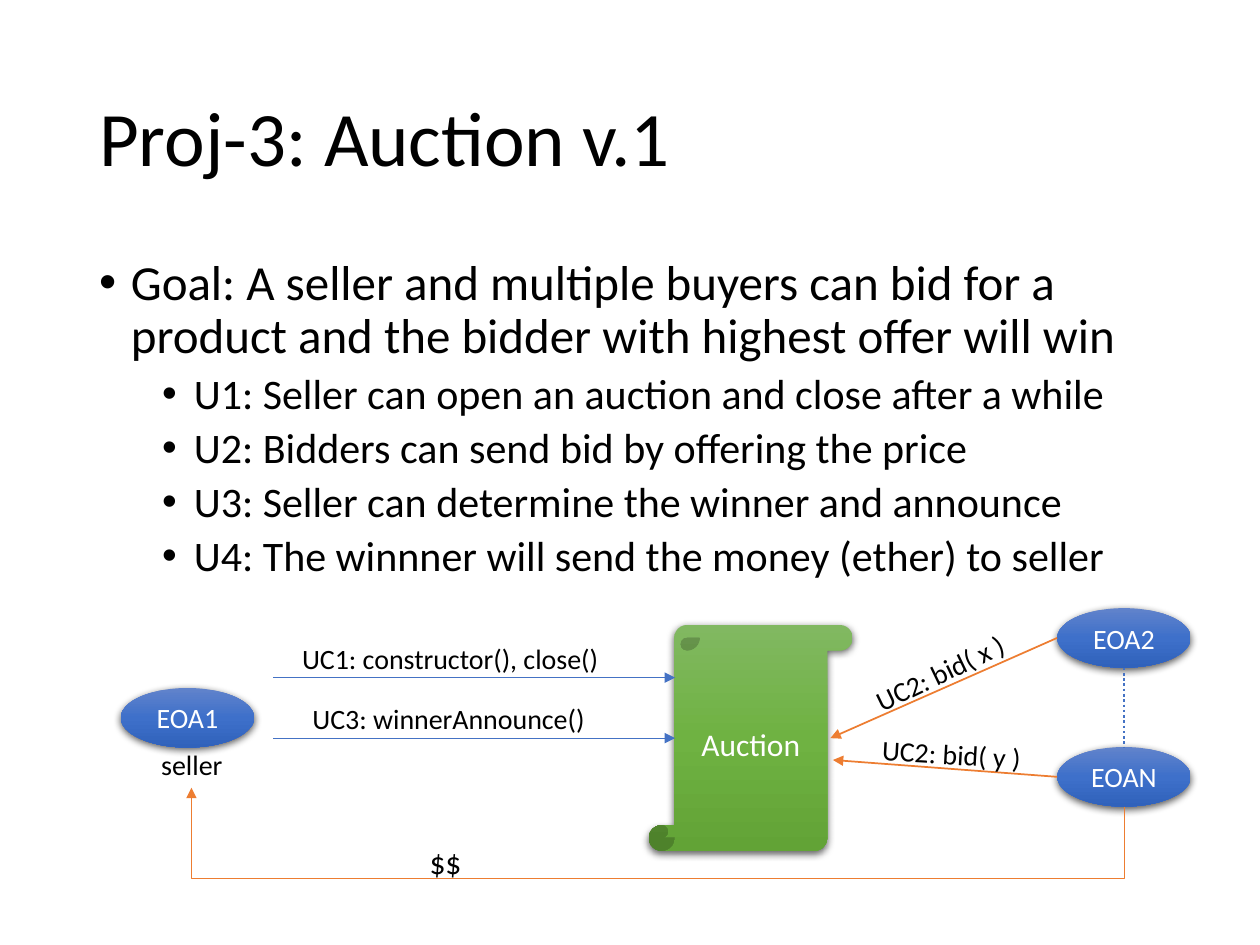
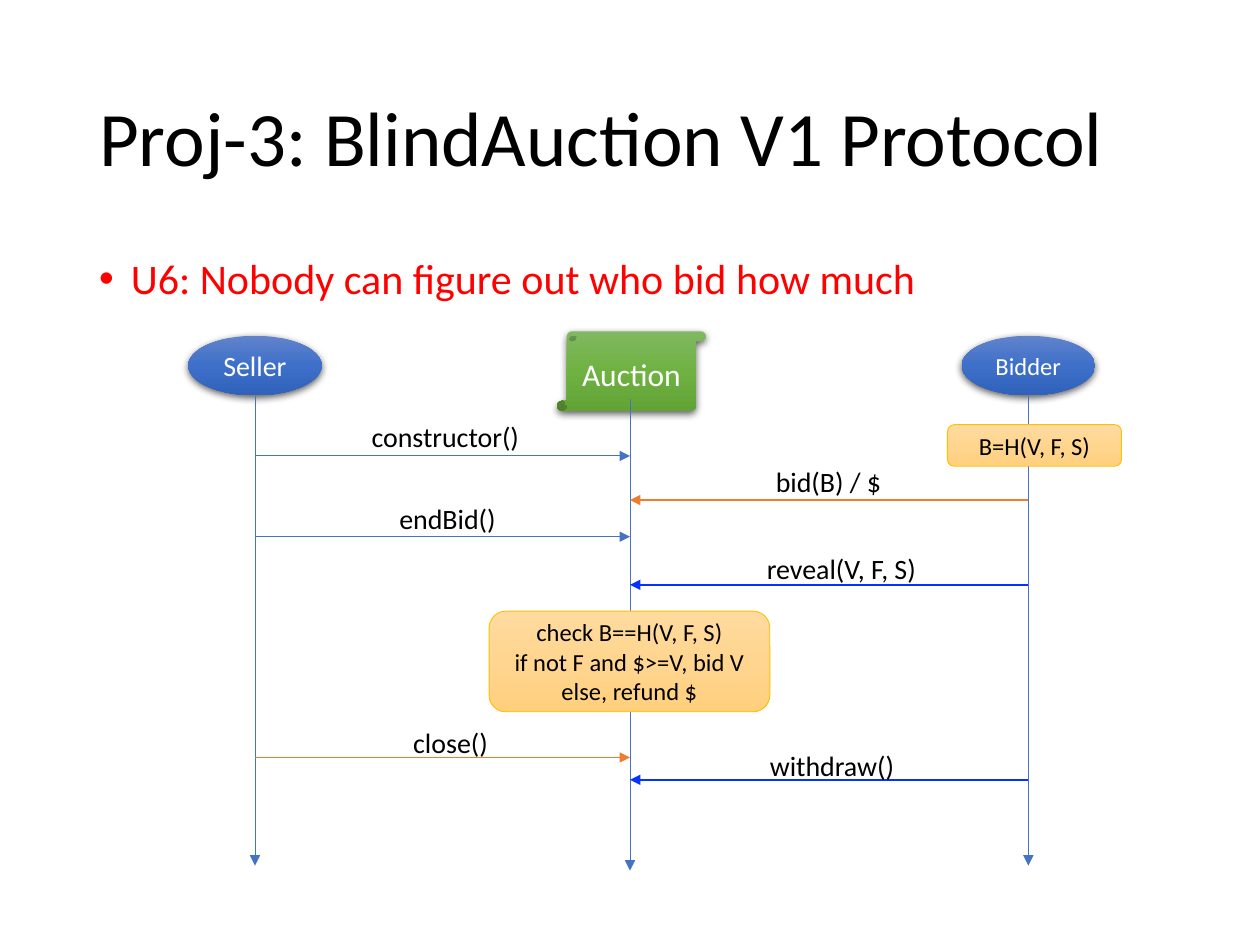
"""Build two auction protocol slides: the participants and the blind-bid sequence."""
from dataclasses import dataclass

from lxml import etree
from pptx import Presentation, util as u
from pptx.dml.color import RGBColor
from pptx.enum import dml, shapes, text
from pptx.oxml.ns import qn


@dataclass(frozen=True)
class Theme:
    font: str = "Calibri"
    black: str = "000000"
    white: str = "FFFFFF"
    red: str = "FF0000"
    blue: str = "4472C4"
    bright: str = "0432FF"
    orange: str = "ED7D31"
    gold: str = "FFC000"
    actor_fill: tuple = ("6183CB", "3E70CA", "3062BB")
    contract_fill: tuple = ("81B861", "6FB242", "62A336")
    note_fill: tuple = ("FFDB9E", "FFD590", "FFD07C")
    title: int = 44
    goal: int = 28
    item: int = 24
    large: int = 18
    label: int = 16
    small: int = 14
    thin: float = 0.5
    medium: float = 1
    dotted: float = 1.5


T = Theme()
TITLE_BOX = (1.75, 1.02, 21.9, 3.68)
ACTOR_W, ACTOR_H = 2.69, 1.2
LABEL_H = 0.94
SELLER_X, AUCTION_X, BIDDER_X = 5.14, 12.7, 20.73

OVERVIEW = {
    "title": "Proj-3: Auction v.1",
    "body_box": (1.75, 5.08, 21.9, 12.09),
    "bullets": [
        (0, "Goal: A seller and multiple buyers can bid for a product and the bidder with highest offer will win",
         T.goal, T.black),
        (1, "U1: Seller can open an auction and close after a while", T.item, T.black),
        (1, "U2: Bidders can send bid by offering the price", T.item, T.black),
        (1, "U3: Seller can determine the winner and announce", T.item, T.black),
        (1, "U4: The winnner will send the money (ether) to seller", T.item, T.black),
    ],
    "contract": (13.08, 12.6, 4.11, 4.55),
    "actors": [("EOA1", 3.78, 14.47, T.label), ("EOA2", 22.66, 12.86, T.label),
               ("EOAN", 22.66, 15.66, T.label)],
    "lines": [
        ((5.51, 13.66), (13.61, 13.66), T.blue, T.thin),
        ((5.51, 14.88), (13.61, 14.88), T.blue, T.thin),
        ((21.31, 12.86), (16.74, 14.88), T.orange, T.medium),
        ((21.31, 15.66), (16.79, 15.32), T.orange, T.medium),
    ],
    "labels": [
        ("UC1: constructor(), close()", 5.84, 12.8, 6.58, 0, T.label),
        ("UC3: winnerAnnounce()", 6.05, 14.02, 6.07, 0, T.label),
        ("seller", 3, 14.94, 1.75, 0, T.label),
        ("UC2: bid( x )", 17.3, 13.08, 3.33, 334.2, T.label),
        ("UC2: bid( y )", 17.53, 14.73, 3.35, 3.2, T.label),
        ("$$", 8.41, 16.87, 1.17, 0, T.large),
    ],
    "notes": [],
}

MESSAGES = [
    ("constructor()", SELLER_X, 9.19, T.blue, T.thin, 7.24, 8.33, 3.53),
    ("bid(B) / $", BIDDER_X, 10.08, T.orange, T.medium, 15.39, 9.25, 2.67),
    ("endBid()", SELLER_X, 10.82, T.blue, T.thin, 7.8, 9.98, 2.49),
    ("reveal(V, F, S)", BIDDER_X, 11.79, T.bright, T.medium, 15.21, 11, 3.56),
    ("close()", SELLER_X, 15.27, T.orange, T.thin, 8.08, 14.5, 2.03),
    ("withdraw()", BIDDER_X, 15.72, T.bright, T.medium, 15.27, 14.96, 3.05),
]
LIFELINES = [(SELLER_X, 7.98, 17.45), (AUCTION_X, 8.05, 17.55), (BIDDER_X, 7.98, 17.45)]

PROTOCOL = {
    "title": "Proj-3: BlindAuction V1 Protocol",
    "body_box": (1.75, 5.08, 21.9, 2.51),
    "bullets": [(0, "U6: Nobody can figure out who bid how much", T.item, T.red)],
    "contract": (11.23, 6.68, 3, 1.6),
    "actors": [("Seller", SELLER_X, 7.37, T.label), ("Bidder", BIDDER_X, 7.37, T.small)],
    "lines": [((x, top), (x, end), T.blue, T.thin) for x, top, end in LIFELINES]
    + [((x, y), (AUCTION_X, y), color, width) for _, x, y, color, width, *_ in MESSAGES],
    "labels": [(words, left, top, w, 0, T.label) for words, *_, left, top, w in MESSAGES],
    "notes": [
        ("B=H(V, F, S)", (19.1, 8.56, 3.51, 0.84)),
        ("check B==H(V, F, S)\nif not F and $>=V, bid V\nelse, refund $", (9.86, 12.32, 5.66, 2.03)),
    ],
}


def cm(*values):
    return [u.Cm(v) for v in values]


def sub(parent, tag, **attrs):
    return etree.SubElement(parent, qn(tag), {k: str(v) for k, v in attrs.items()})


def write(p, words, size=T.label, color=T.black, align=None, spacing=None, before=None):
    r = p.add_run()
    r.text = words
    r.font.name, r.font.size = T.font, u.Pt(size)
    r.font.color.rgb = RGBColor.from_string(color)
    p.alignment, p.line_spacing = align, spacing
    if before:
        p.space_before = u.Pt(before)


def add_title(s, words):
    tf = s.shapes.add_textbox(*cm(*TITLE_BOX)).text_frame
    tf.word_wrap, tf.vertical_anchor = True, text.MSO_ANCHOR.MIDDLE
    write(tf.paragraphs[0], words, size=T.title, spacing=0.9)


def add_bullets(s, box, bullets):
    tf = s.shapes.add_textbox(*cm(*box)).text_frame
    tf.word_wrap = True
    for i, (level, words, size, color) in enumerate(bullets):
        p = tf.add_paragraph() if i else tf.paragraphs[0]
        p.level = level
        write(p, words, size=size, color=color, spacing=0.9, before=5 if level else 10)
        pPr = p._p.get_or_add_pPr()
        pPr.set("marL", str(u.Cm(0.64 + 1.27 * level)))
        pPr.set("indent", str(u.Cm(-0.64)))
        sub(pPr, "a:buFont", typeface="Arial")
        sub(pPr, "a:buChar", char="•")


def add_node(s, kind, box, words, stops, size=T.label, color=T.white, outline=None):
    sp = s.shapes.add_shape(kind, *cm(*box))
    sp.fill.gradient()
    sp.fill.gradient_angle = 270
    gs_list = sp._element.spPr.find(".//" + qn("a:gsLst"))
    for gs in list(gs_list):
        gs_list.remove(gs)
    for i, stop in enumerate(stops):
        sub(sub(gs_list, "a:gs", pos=i * 50000), "a:srgbClr", val=stop)
    sp.shadow.inherit = False
    if outline:
        sp.line.color.rgb, sp.line.width = RGBColor.from_string(outline), u.Pt(T.thin)
    else:
        sp.line.fill.background()
        shadow = sub(sp._element.spPr.find(qn("a:effectLst")), "a:outerShdw", blurRad=u.Pt(4.5),
                     dist=u.Pt(1.5), dir=5400000, algn="ctr", rotWithShape=0)
        sub(sub(shadow, "a:srgbClr", val=T.black), "a:alpha", val=63000)
    tf = sp.text_frame
    tf.word_wrap, tf.vertical_anchor = True, text.MSO_ANCHOR.MIDDLE
    for i, line in enumerate(words.split("\n")):
        p = tf.add_paragraph() if i else tf.paragraphs[0]
        write(p, line, size=size, color=color, align=text.PP_ALIGN.CENTER)


def add_line(s, start, end, color, width, kind=shapes.MSO_CONNECTOR.STRAIGHT, arrow=True):
    c = s.shapes.add_connector(kind, *cm(*start, *end))
    c.line.color.rgb, c.line.width = RGBColor.from_string(color), u.Pt(width)
    if arrow:
        sub(c.line._get_or_add_ln(), "a:tailEnd", type="triangle")
    sub(c._element.spPr, "a:effectLst")
    return c


def add_return_path(s, start, end, bottom):
    (x1, y1), (x2, y2) = start, end
    cx, cy, span, rise = (x1 + x2) / 2, (y1 + y2) / 2, x1 - x2, y1 - y2
    c = add_line(s, (cx + rise / 2, cy - span / 2), (cx - rise / 2, cy + span / 2),
                 T.orange, T.thin, kind=shapes.MSO_CONNECTOR.ELBOW)
    spPr = c._element.spPr
    spPr.find(qn("a:xfrm")).set("rot", "5400000")
    guides = spPr.find(qn("a:prstGeom")).find(qn("a:avLst"))
    sub(guides, "a:gd", name="adj1", fmla=f"val {round((y1 - bottom) / rise * 100000)}")


def add_label(s, words, left, top, width, turn, size):
    sp = s.shapes.add_textbox(*cm(left, top, width, LABEL_H))
    sp.rotation = turn
    tf = sp.text_frame
    tf.word_wrap, tf.auto_size = False, text.MSO_AUTO_SIZE.SHAPE_TO_FIT_TEXT
    write(tf.paragraphs[0], words, size=size)


def add_slide(prs, content):
    s = prs.slides.add_slide(prs.slide_layouts[6])
    add_title(s, content["title"])
    add_bullets(s, content["body_box"], content["bullets"])
    add_node(s, shapes.MSO_SHAPE.VERTICAL_SCROLL, content["contract"], "Auction",
             T.contract_fill, size=T.large)
    for words, x, y, size in content["actors"]:
        box = (x - ACTOR_W / 2, y - ACTOR_H / 2, ACTOR_W, ACTOR_H)
        add_node(s, shapes.MSO_SHAPE.OVAL, box, words, T.actor_fill, size=size)
    for line in content["lines"]:
        add_line(s, *line)
    for words, box in content["notes"]:
        add_node(s, shapes.MSO_SHAPE.ROUNDED_RECTANGLE, box, words, T.note_fill,
                 size=T.small, color=T.black, outline=T.gold)
    for label in content["labels"]:
        add_label(s, *label)
    return s


def main():
    prs = Presentation()
    prs.slide_width, prs.slide_height = cm(25.4, 19.05)
    s = add_slide(prs, OVERVIEW)
    between = add_line(s, (22.66, 13.46), (22.66, 15.06), T.blue, T.dotted, arrow=False)
    between.line.dash_style = dml.MSO_LINE.ROUND_DOT
    add_return_path(s, (22.66, 16.26), (3.86, 15.88), 17.7)
    add_slide(prs, PROTOCOL)
    prs.save("out.pptx")


if __name__ == "__main__":
    main()
